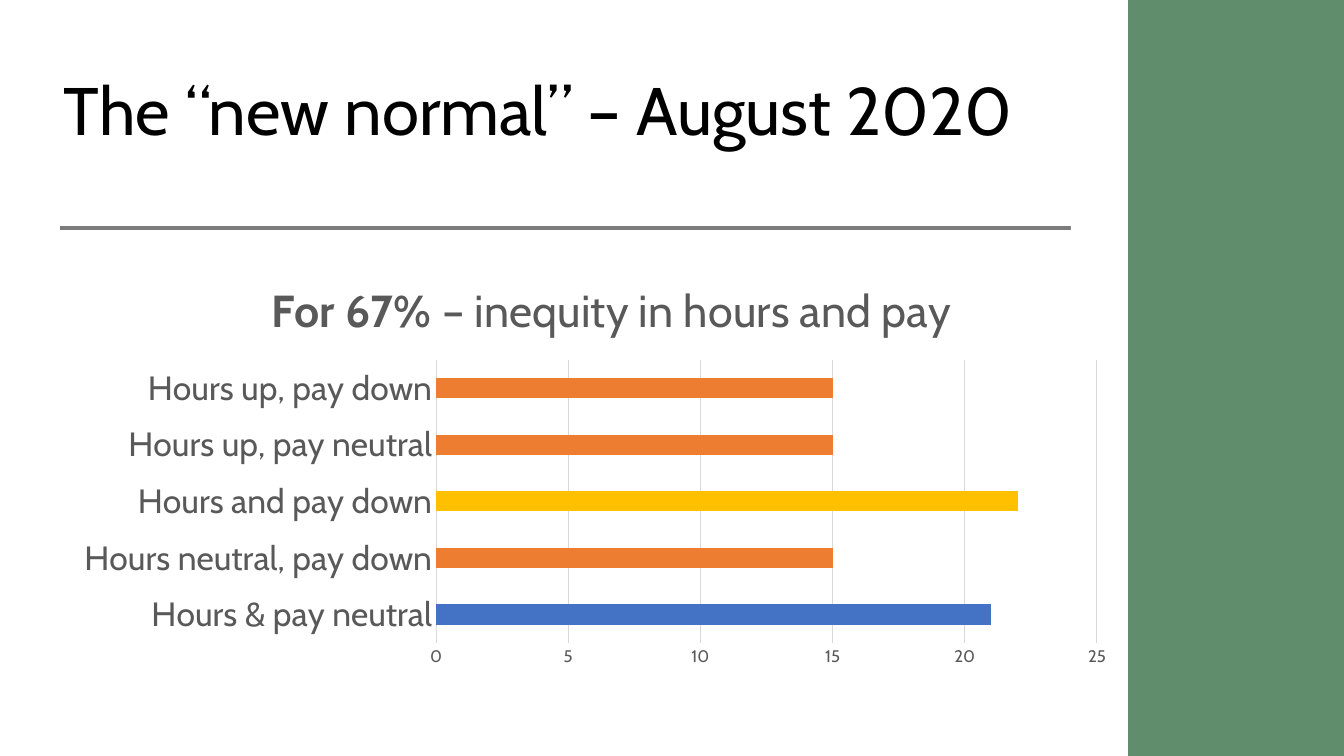
import pptx
import pptx.chart.data
import pptx.dml.color
import pptx.enum.chart
import pptx.enum.shapes
import pptx.enum.text
import pptx.oxml
import pptx.oxml.ns
import pptx.util

RGB = pptx.dml.color.RGBColor
BLACK = RGB(0x00, 0x00, 0x00)
WHITE = RGB(0xFF, 0xFF, 0xFF)
GREEN = RGB(0x60, 0x8D, 0x6C)
RULE_GRAY = RGB(0x7C, 0x7C, 0x7C)
TEXT_GRAY = RGB(0x59, 0x59, 0x59)
GRID_GRAY = RGB(0xD9, 0xD9, 0xD9)
BLUE = RGB(0x44, 0x72, 0xC4)
ORANGE = RGB(0xED, 0x7D, 0x31)
GOLD = RGB(0xFF, 0xC0, 0x00)

FONT = "Cabin"
TITLE = "The “new normal” – August 2020"
CHART_TITLE = [("For 67%", True), (" – inequity in hours and pay", False)]
ANSWERS = [
    ("Hours & pay neutral", 21, BLUE),
    ("Hours neutral, pay down", 15, ORANGE),
    ("Hours and pay down", 22, GOLD),
    ("Hours up, pay neutral", 15, ORANGE),
    ("Hours up, pay down", 15, ORANGE),
]

# Lengths in px: left, top, width, height
PAGE_SIZE = (1344, 756)
SIDE_PANEL = (1075, 0, 269, 756)
WHITE_STRIP = (1071, 0, 57, 756)
RULE = (60, 228, 1075, 228)
TITLE_BOX = (54, 41, 1007, 146)
CHART_BOX = (64, 274, 1063, 400)
PLOT_AREA = (436, 360, 661, 283)
CHART_TITLE_AT = (268, 279)
EMU_PER_PX = 914400 / 100.8


def emu(lengths):
    return [pptx.util.Emu(round(length * EMU_PER_PX)) for length in lengths]


def set_font(font, size, color, bold=False):
    values = {"name": FONT, "size": pptx.util.Pt(size), "bold": bold}
    for name, value in values.items():
        setattr(font, name, value)
    font.color.rgb = color


def set_line(line, color, width):
    line.color.rgb = color
    line.width = pptx.util.Pt(width)


def add_block(page, place, color):
    block = page.shapes.add_shape(
        pptx.enum.shapes.MSO_SHAPE.RECTANGLE, *emu(place))
    block.shadow.inherit = False
    block.fill.solid()
    block.fill.fore_color.rgb = color
    block.line.fill.background()


def add_rule(page):
    rule = page.shapes.add_connector(
        pptx.enum.shapes.MSO_CONNECTOR.STRAIGHT, *emu(RULE))
    set_line(rule.line, RULE_GRAY, 2.5)
    properties = rule._element.spPr
    properties.append(pptx.oxml.parse_xml(
        f'<a:effectLst {pptx.oxml.ns.nsdecls("a")}/>'))


def add_title(page):
    frame = page.shapes.add_textbox(*emu(TITLE_BOX)).text_frame
    frame.word_wrap = True
    frame.vertical_anchor = pptx.enum.text.MSO_ANCHOR.MIDDLE
    para = frame.paragraphs[0]
    para.line_spacing = 0.9
    span = para.add_run()
    span.text = TITLE
    set_font(span.font, 48, BLACK)


def place_in_chart(element, position, place, target=""):
    """Fix a chart part at a px place, as fractions of the chart box."""
    left, top, width, height = CHART_BOX
    parts = {"x": (place[0] - left) / width, "y": (place[1] - top) / height}
    modes = "".join(f'<c:{key}Mode val="edge"/>' for key in parts)
    if len(place) == 4:
        parts.update(w=place[2] / width, h=place[3] / height)
    values = "".join(
        f'<c:{key} val="{value:.4f}"/>' for key, value in parts.items())
    for old in element.findall(pptx.oxml.ns.qn("c:layout")):
        element.remove(old)
    element.insert(position, pptx.oxml.parse_xml(
        f'<c:layout {pptx.oxml.ns.nsdecls("c")}><c:manualLayout>'
        f'{target}{modes}{values}</c:manualLayout></c:layout>'))


def add_chart(page):
    data = pptx.chart.data.CategoryChartData()
    data.categories = [label for label, _, _ in ANSWERS]
    data.add_series("Series 1", [value for _, value, _ in ANSWERS])
    chart = page.shapes.add_chart(
        pptx.enum.chart.XL_CHART_TYPE.BAR_CLUSTERED, *emu(CHART_BOX), data).chart
    chart.has_legend = False
    set_font(chart.font, 10, BLACK)

    chart.has_title = True
    para = chart.chart_title.text_frame.paragraphs[0]
    for text, bold in CHART_TITLE:
        span = para.add_run()
        span.text = text
        set_font(span.font, 32, TEXT_GRAY, bold)
    place_in_chart(chart.chart_title._element, 1, CHART_TITLE_AT)
    plot_element = chart._chartSpace.chart.plotArea
    place_in_chart(plot_element, 0, PLOT_AREA, '<c:layoutTarget val="inner"/>')

    for axis, size in ((chart.category_axis, 24), (chart.value_axis, 12)):
        axis.major_tick_mark = pptx.enum.chart.XL_TICK_MARK.NONE
        axis.minor_tick_mark = pptx.enum.chart.XL_TICK_MARK.NONE
        set_font(axis.tick_labels.font, size, TEXT_GRAY)
    set_line(chart.category_axis.format.line, GRID_GRAY, 0.75)
    scale = {"minimum_scale": 0, "maximum_scale": 25, "major_unit": 5,
             "has_major_gridlines": True}
    for name, value in scale.items():
        setattr(chart.value_axis, name, value)
    chart.value_axis.format.line.fill.background()
    set_line(chart.value_axis.major_gridlines.format.line, GRID_GRAY, 0.75)

    plot = chart.plots[0]
    plot.gap_width = 182
    plot.vary_by_categories = False
    series = plot.series[0]
    series.format.fill.solid()
    series.format.fill.fore_color.rgb = BLUE
    for index, (_, _, color) in enumerate(ANSWERS):
        fill = series.points[index].format.fill
        fill.solid()
        fill.fore_color.rgb = color


def main():
    deck = pptx.Presentation()
    deck.slide_width, deck.slide_height = emu(PAGE_SIZE)
    page = deck.slides.add_slide(deck.slide_layouts[6])
    add_block(page, SIDE_PANEL, GREEN)
    add_rule(page)
    add_block(page, WHITE_STRIP, WHITE)
    add_title(page)
    add_chart(page)
    deck.save("out.pptx")


if __name__ == "__main__":
    main()
